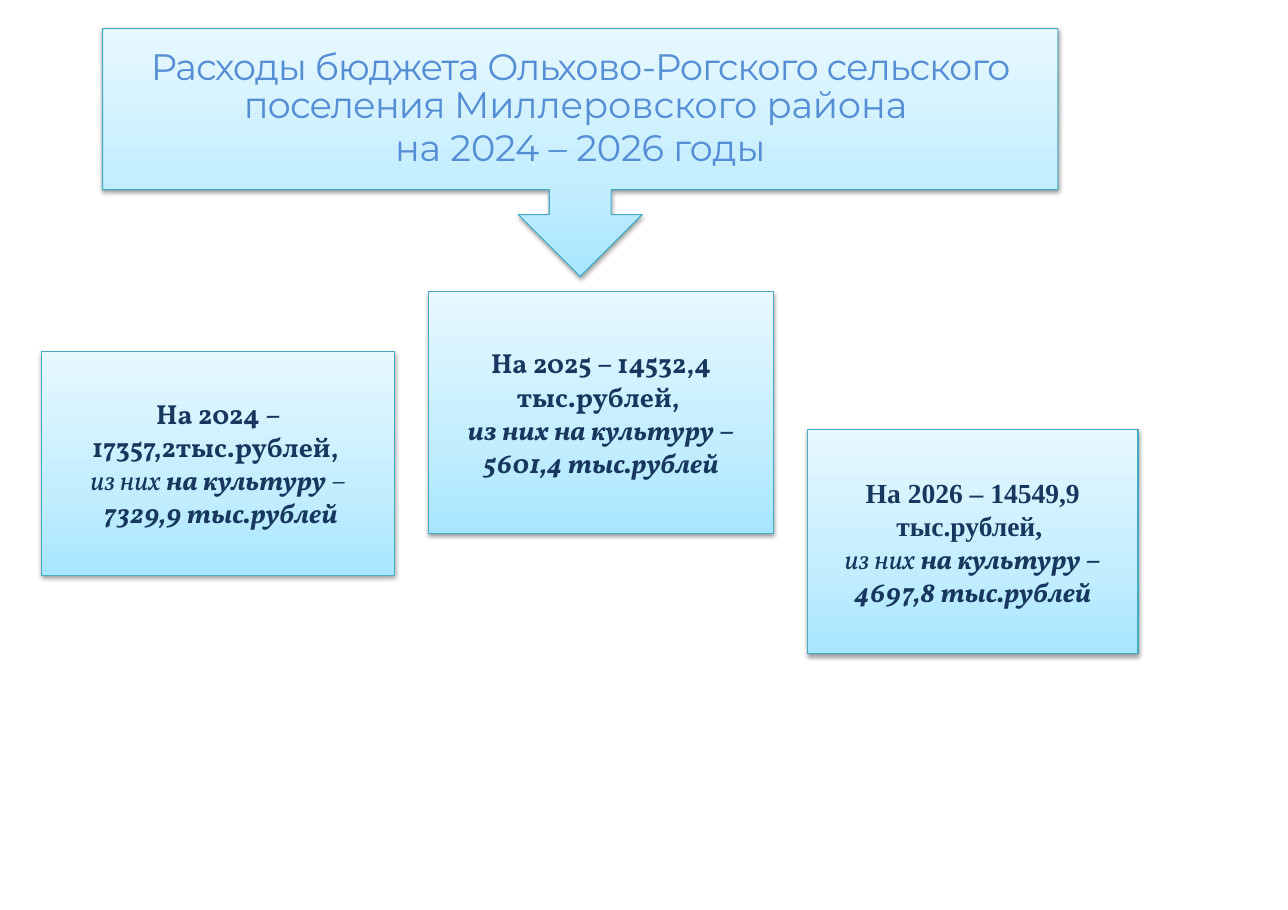
from copy import deepcopy

from lxml import etree
from pptx import Presentation
from pptx import util as u
from pptx.dml.color import RGBColor
from pptx.enum import shapes, text
from pptx.oxml.ns import qn

HUES = {"low": "A7E6FF", "mid": "C1EDFF", "high": "E7F8FF",
        "edge": "46AAC5", "title": "558ED5", "body": "17375E", "shade": "000000"}
STOPS = [("low", 0), ("mid", 0.35), ("high", 1)]
SERIF, ROMAN, SANS = "Vollkorn", "Times New Roman", "Montserrat"

deck = Presentation()
deck.slide_width, deck.slide_height = u.Inches(11.69), u.Inches(8.26)
slide = deck.slides.add_slide(deck.slide_layouts[5])


def place(*area):
    """Turn left, top, width, height in percent of the slide into lengths."""
    sides = (deck.slide_width, deck.slide_height) * 2
    return [u.Emu(round(side * part / 100)) for side, part in zip(sides, area)]


def write(shape, paras, size=18, hue="body", lead=None, before=0):
    """Fill a shape with paragraphs of (words, font, bold, italic, tracking) runs."""
    frame = shape.text_frame
    frame.word_wrap = True
    frame.auto_size = text.MSO_AUTO_SIZE.NONE
    frame.vertical_anchor = text.MSO_ANCHOR.MIDDLE
    for i, runs in enumerate(paras):
        para = frame.add_paragraph() if i else frame.paragraphs[0]
        para.alignment = text.PP_ALIGN.CENTER
        para.space_before = u.Pt(before)
        if lead:
            para.line_spacing = u.Pt(lead)
        for words, face, bold, slant, track in runs:
            run = para.add_run()
            run.text = words
            font = run.font
            font.name, font.size = face, u.Pt(size)
            font.bold, font.italic = bold, slant
            font.color.rgb = RGBColor.from_string(HUES[hue])
            if track:
                run._r.get_or_add_rPr().set("spc", str(track))


CARDS = [
    ((3.25, 38.62, 27.37, 24.58), [
        [("На 2024 – 17357,2тыс.рублей, ", SERIF, True, False, 0)],
        [("из них ", SERIF, False, True, 0), ("на культуру ", SERIF, True, True, 0),
         ("–", SERIF, False, True, 0)],
        [(" ", SERIF, False, True, 0), ("7329,9 тыс.рублей", SERIF, True, True, 0)]]),
    ((33.28, 32.08, 26.78, 26.51), [
        [("На 2025 – 14532,4 тыс.рублей, ", SERIF, True, False, 0)],
        [("из них на культуру – 5601,4 тыс.рублей", SERIF, True, True, 0)]]),
    ((62.7, 47.22, 25.66, 24.58), [
        [("На 2026 – 14549,9 тыс.рублей, ", ROMAN, True, False, 0)],
        [("из них ", SERIF, False, True, 0),
         ("на культуру – 4697,8 тыс.рублей", SERIF, True, True, 0)]]),
]
KIND = shapes.MSO_SHAPE
PANELS = [(KIND.DOWN_ARROW_CALLOUT, (7.96, 3.15, 74.17, 27.24), None)]
PANELS += [(KIND.RECTANGLE, area, paras) for area, paras in CARDS]

for kind, area, paras in PANELS:
    panel = slide.shapes.add_shape(kind, *place(*area))
    panel.line.color.rgb = RGBColor.from_string(HUES["edge"])
    panel.line.width = u.Pt(0.75)

    panel.fill.gradient()
    panel.fill.gradient_angle = 90
    ramp = panel._element.spPr.find(".//" + qn("a:gsLst"))
    ramp.append(deepcopy(ramp[0]))
    for stop, (hue, spot) in zip(panel.fill.gradient_stops, STOPS):
        stop.color.rgb = RGBColor.from_string(HUES[hue])
        stop.position = spot

    panel.shadow.inherit = False
    glow = panel._element.spPr.find(qn("a:effectLst"))
    shade = etree.SubElement(glow, qn("a:outerShdw"), blurRad=str(u.Pt(3.1)),
                             dist=str(u.Pt(1.6)), dir="5400000", rotWithShape="0")
    tint = etree.SubElement(shade, qn("a:srgbClr"), val=HUES["shade"])
    etree.SubElement(tint, qn("a:alpha"), val="38000")

    if paras:
        write(panel, paras)

title = slide.shapes.title
title.left, title.top, title.width, title.height = place(7.96, 3.15, 74.17, 17.7)
write(title, [
    [("Расходы бюджета Ольхово-Рогского сельского поселения ", SANS, False, False, -60),
     ("Миллеровского района ", SANS, False, False, -10)],
    [("на 2024 – 2026 годы", SANS, False, False, -10)],
], size=24, hue="title", lead=25, before=3.5)
# The title is drawn last so that it lies on the callout.
tree = slide.shapes._spTree
tree.append(title._element)

deck.save("out.pptx")
